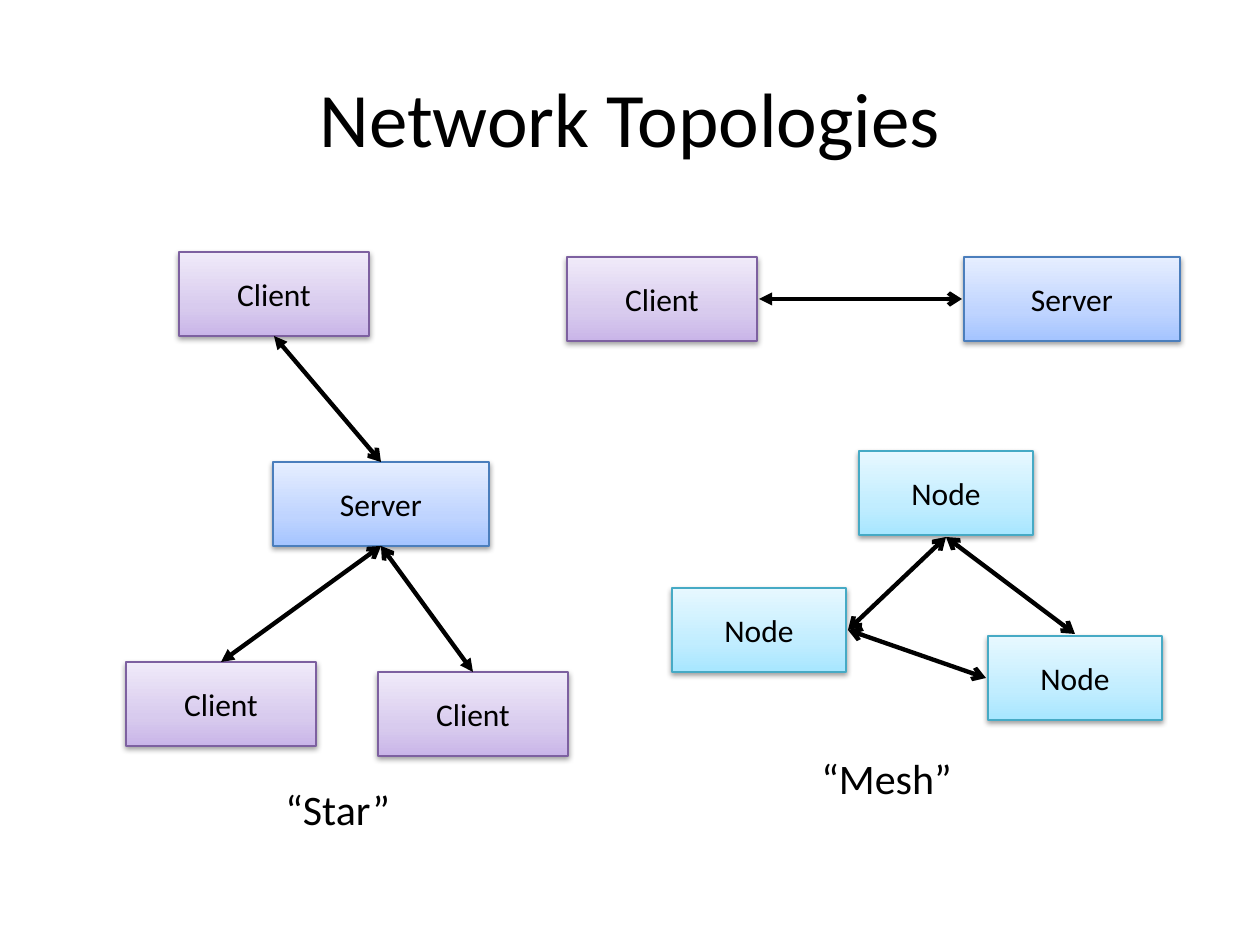
from copy import deepcopy

from lxml import etree
from pptx import Presentation
from pptx.dml.color import RGBColor
from pptx.enum.shapes import MSO_CONNECTOR, MSO_SHAPE
from pptx.enum.text import MSO_ANCHOR, PP_ALIGN
from pptx.oxml.ns import qn
from pptx.util import Emu, Pt

RECTANGLE = MSO_SHAPE.RECTANGLE
STRAIGHT = MSO_CONNECTOR.STRAIGHT
MIDDLE, TOP = MSO_ANCHOR.MIDDLE, MSO_ANCHOR.TOP
CENTER, LEFT = PP_ALIGN.CENTER, PP_ALIGN.LEFT
PX = 914400 / 126
BOX_HEIGHT = 84

THEME = {
    "font": "Calibri",
    "ink": "000000",
    "title": 44,
    "caption": 24,
    "label": 18,
    "box_line": 0.75,
    "arrow_line": 2.5,
    "Client": {"width": 190, "line": "7D60A0", "stops": ["C9B5E8", "D8CBEE", "F0EAF9"]},
    "Server": {"width": 216, "line": "4B7EBC", "stops": ["A4C4FF", "BFD4FF", "E6EEFF"]},
    "Node": {"width": 174, "line": "46AAC5", "stops": ["A7E6FF", "C1EDFF", "E7F8FF"]},
}
INK = RGBColor.from_string(THEME["ink"])


def px(*lengths):
    return [Emu(round(length * PX)) for length in lengths]


def write(shape, text, size, alignment, anchor):
    frame = shape.text_frame
    frame.word_wrap = True
    frame.vertical_anchor = anchor
    paragraph = frame.paragraphs[0]
    paragraph.alignment = alignment
    run = paragraph.add_run()
    run.text = text
    run.font.name = THEME["font"]
    run.font.size = Pt(THEME[size])
    run.font.color.rgb = INK


presentation = Presentation()
presentation.slide_width, presentation.slide_height = px(1260, 945)
slide = presentation.slides.add_slide(presentation.slide_layouts[6])

texts = [
    ("Network Topologies", "title", (63, 38, 1134, 157), CENTER, MIDDLE),
    ("“Star”", "caption", (273, 777, 131, 63), LEFT, TOP),
    ("“Mesh”", "caption", (809, 746, 157, 63), LEFT, TOP),
]
for text, size, place, alignment, anchor in texts:
    write(slide.shapes.add_textbox(*px(*place)), text, size, alignment, anchor)

boxes = {
    "pair client": ("Client", 567, 257),
    "pair server": ("Server", 964, 257),
    "star server": ("Server", 273, 462),
    "star top": ("Client", 179, 252),
    "star right": ("Client", 378, 672),
    "star left": ("Client", 126, 662),
    "mesh left": ("Node", 672, 588),
    "mesh top": ("Node", 859, 451),
    "mesh right": ("Node", 988, 636),
}
sides = {}
for name, (kind, left, top) in boxes.items():
    style = THEME[kind]
    width = style["width"]
    shape = slide.shapes.add_shape(RECTANGLE, *px(left, top, width, BOX_HEIGHT))
    shape.fill.gradient()
    shape.fill.gradient_angle = 90
    stop_list = shape.element.spPr.find(".//" + qn("a:gsLst"))
    stop_list.append(deepcopy(stop_list[0]))
    for stop, position, color in zip(shape.fill.gradient_stops, (0, 0.35, 1), style["stops"]):
        stop.position = position
        stop.color.rgb = RGBColor.from_string(color)
    shape.line.color.rgb = RGBColor.from_string(style["line"])
    shape.line.width = Pt(THEME["box_line"])
    shape.shadow.inherit = False
    effects = shape.element.spPr.find(qn("a:effectLst"))
    shadow = etree.SubElement(effects, qn("a:outerShdw"), blurRad="40000", dist="20000",
                              dir="5400000", rotWithShape="0")
    shadow_color = etree.SubElement(shadow, qn("a:srgbClr"), val=THEME["ink"])
    etree.SubElement(shadow_color, qn("a:alpha"), val="38000")
    write(shape, kind, "label", CENTER, MIDDLE)

    gap = 0 if name.startswith("star") else 2
    center, middle = left + width // 2, top + BOX_HEIGHT // 2
    sides[name] = {
        "top": (center, top - gap),
        "bottom": (center, top + BOX_HEIGHT + gap),
        "left": (left - gap, middle),
        "right": (left + width + gap, middle),
    }

arrows = [
    ("pair client", "right", "pair server", "left", "triangle"),
    ("star top", "bottom", "star server", "top", "triangle"),
    ("star right", "top", "star server", "bottom", "triangle"),
    ("star left", "top", "star server", "bottom", "triangle"),
    ("mesh left", "right", "mesh top", "bottom", "arrow"),
    ("mesh right", "left", "mesh left", "right", "arrow"),
    ("mesh right", "top", "mesh top", "bottom", "arrow"),
]
for start, start_side, end, end_side, head in arrows:
    points = px(*sides[start][start_side], *sides[end][end_side])
    connector = slide.shapes.add_connector(STRAIGHT, *points)
    connector.line.color.rgb = INK
    connector.line.width = Pt(THEME["arrow_line"])
    line = connector.line._get_or_add_ln()
    etree.SubElement(line, qn("a:headEnd"), type=head)
    etree.SubElement(line, qn("a:tailEnd"), type="arrow")
    etree.SubElement(connector.element.spPr, qn("a:effectLst"))

presentation.save("out.pptx")
